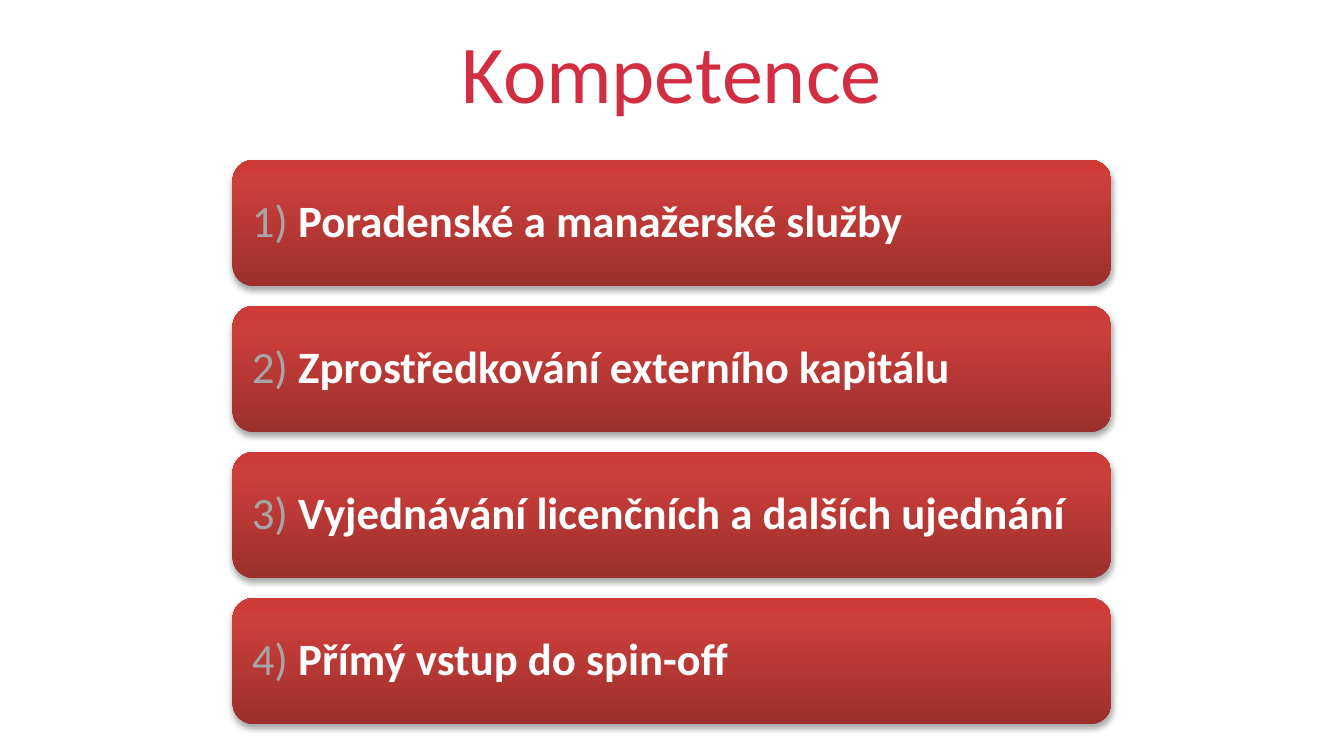
import pptx
import pptx.util
import pptx.oxml
from pptx.dml.color import RGBColor
from pptx.enum.shapes import MSO_SHAPE
from pptx.enum.text import MSO_ANCHOR, PP_ALIGN
from pptx.oxml.ns import nsdecls, qn

Inches, Pt = pptx.util.Inches, pptx.util.Pt

COLORS = {
    "title": "D22D40", "number": "A6A6A6", "text": "FFFFFF",
    "low": "9C2F2D", "mid": "CB3E3A", "high": "CE3B37", "shadow": "000000",
}
FONT = "Calibri"
SKILLS = [
    "Poradenské a manažerské služby",
    "Zprostředkování externího kapitálu",
    "Vyjednávání licenčních a dalších ujednání",
    "Přímý vstup do spin-off",
]


def style(run, size, color, bold=False):
    font = run.font
    font.name, font.size, font.bold = FONT, Pt(size), bold
    font.color.rgb = RGBColor.from_string(COLORS[color])


def shade(card):
    """Give the card its upward gradient and soft shadow below."""
    card.line.fill.background()
    card.fill.solid()
    props = card._element.spPr
    stops = "".join(
        f'<a:gs pos="{pos * 1000}"><a:srgbClr val="{COLORS[key]}"/></a:gs>'
        for pos, key in ((0, "low"), (80, "mid"), (100, "high")))
    props.replace(props.find(qn("a:solidFill")), pptx.oxml.parse_xml(
        f'<a:gradFill {nsdecls("a")} rotWithShape="1"><a:gsLst>{stops}</a:gsLst>'
        '<a:lin ang="16200000" scaled="0"/></a:gradFill>'))
    card.shadow.inherit = False
    props.find(qn("a:effectLst")).append(pptx.oxml.parse_xml(
        f'<a:outerShdw {nsdecls("a")} blurRad="{Pt(3.1)}" dist="{Pt(1.8)}" '
        f'dir="5400000" rotWithShape="0"><a:srgbClr val="{COLORS["shadow"]}">'
        '<a:alpha val="35000"/></a:srgbClr></a:outerShdw>'))


def add_title(slide, text, left, top, width, height):
    title = slide.shapes.title
    title.left, title.top = Inches(left), Inches(top)
    title.width, title.height = Inches(width), Inches(height)
    frame = title.text_frame
    frame.text = text
    frame.vertical_anchor = MSO_ANCHOR.BOTTOM
    para = frame.paragraphs[0]
    para.alignment = PP_ALIGN.CENTER
    style(para.runs[0], 44, "title")


def add_card(slide, number, text, left, top, width, height):
    card = slide.shapes.add_shape(
        MSO_SHAPE.ROUNDED_RECTANGLE,
        Inches(left), Inches(top), Inches(width), Inches(height))
    shade(card)
    frame = card.text_frame
    frame.word_wrap = True
    frame.vertical_anchor = MSO_ANCHOR.MIDDLE
    frame.margin_left = frame.margin_right = Inches(0.1)
    frame.margin_top = frame.margin_bottom = Inches(0.1)
    para = frame.paragraphs[0]
    para.alignment = PP_ALIGN.LEFT
    para.line_spacing = 0.9
    for part, color, bold in ((f"{number}) ", "number", False),
                              (text, "text", True)):
        run = para.add_run()
        run.text = part
        style(run, 24, color, bold)


def add_list(slide, items, left, top, width, height, card=0.94):
    """Spread one card per item evenly down the box."""
    step = (height - card) / (len(items) - 1)
    for i, item in enumerate(items):
        add_card(slide, i + 1, item, left, top + i * step, width, card)


def main():
    deck = pptx.Presentation()
    deck.slide_width = Inches(10)
    deck.slide_height = deck.slide_width * 9 // 16
    slide = deck.slides.add_slide(deck.slide_layouts.get_by_name("Title Only"))
    add_title(slide, "Kompetence", 0.5, 0, 9, 0.94)
    add_list(slide, SKILLS, 1.73, 1.19, 6.54, 4.2)
    deck.save("out.pptx")


if __name__ == "__main__":
    main()
